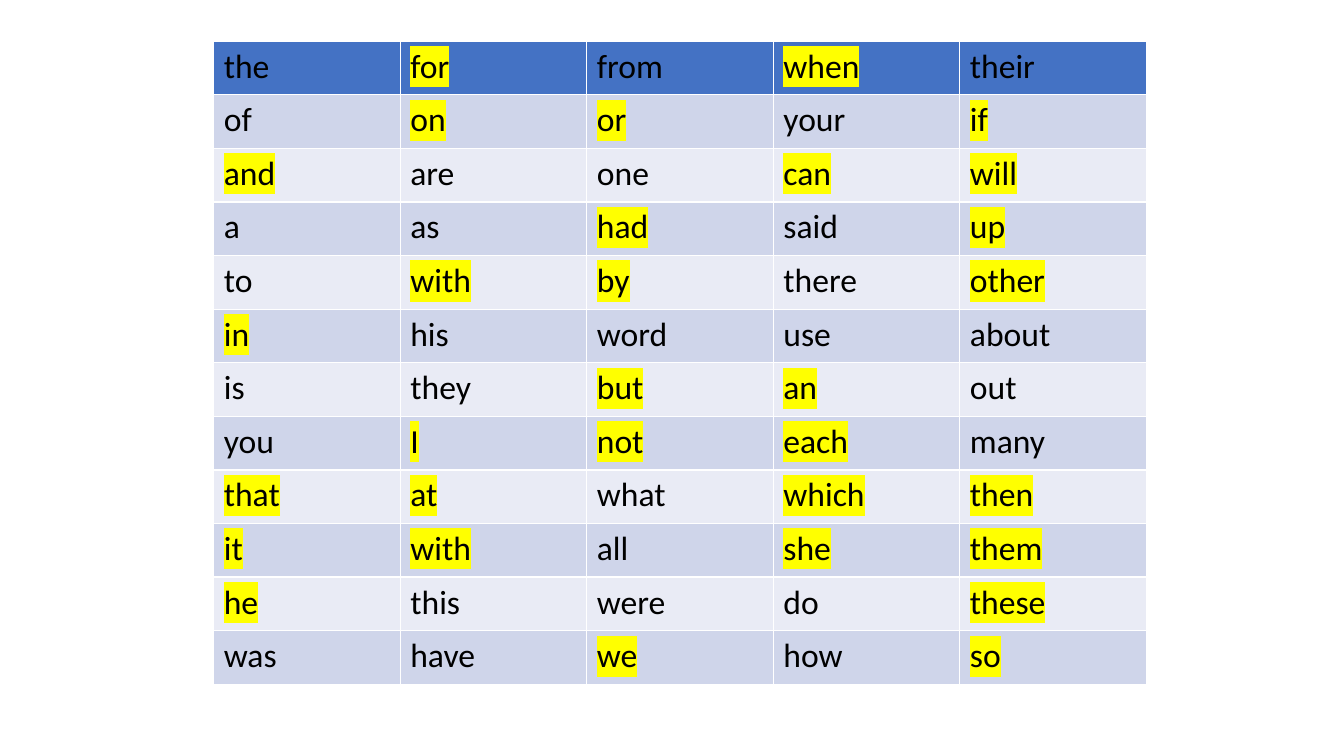
from dataclasses import dataclass

from lxml.etree import SubElement
from pptx import Presentation
from pptx.dml.color import RGBColor
from pptx.oxml.ns import qn
from pptx.util import Inches, Pt


@dataclass(frozen=True)
class Theme:
    font: str = "Calibri"
    word_size: int = 24
    text: str = "000000"
    header: str = "4472C4"
    bands: tuple = ("E9EBF5", "CFD5EA")
    highlight: str = "FFFF00"


THEME = Theme()
MARK = "*"
WORD_ROWS = [
    "the *for from *when their",
    "of *on *or your *if",
    "*and are one *can *will",
    "a as *had said *up",
    "to *with *by there *other",
    "*in his word use about",
    "is they *but *an out",
    "you *I *not *each many",
    "*that *at what *which *then",
    "*it *with all *she *them",
    "*he this were do *these",
    "was have *we how *so",
]


def fill_cell(cell, word, color):
    cell.fill.solid()
    cell.fill.fore_color.rgb = RGBColor.from_string(color)
    run = cell.text_frame.paragraphs[0].add_run()
    run.text = word.removeprefix(MARK)
    run.font.size = Pt(THEME.word_size)
    run.font.bold = False
    run.font.color.rgb = RGBColor.from_string(THEME.text)
    if word.startswith(MARK):
        highlight = SubElement(run._r.get_or_add_rPr(), qn("a:highlight"))
        SubElement(highlight, qn("a:srgbClr"), val=THEME.highlight)
    run.font.name = THEME.font


def add_word_table(slide, left, top, width, height):
    rows = [line.split() for line in WORD_ROWS]
    table = slide.shapes.add_table(
        len(rows), len(rows[0]), left, top, width, height
    ).table
    for row_index, words in enumerate(rows):
        color = THEME.bands[row_index % 2] if row_index else THEME.header
        for column_index, word in enumerate(words):
            fill_cell(table.cell(row_index, column_index), word, color)


def main():
    presentation = Presentation()
    presentation.slide_width = Inches(13.33)
    presentation.slide_height = Inches(7.5)
    slide = presentation.slides.add_slide(presentation.slide_layouts[6])
    add_word_table(slide, Inches(2.12), Inches(0.41), Inches(9.25), Inches(6.38))
    presentation.save("out.pptx")


if __name__ == "__main__":
    main()
